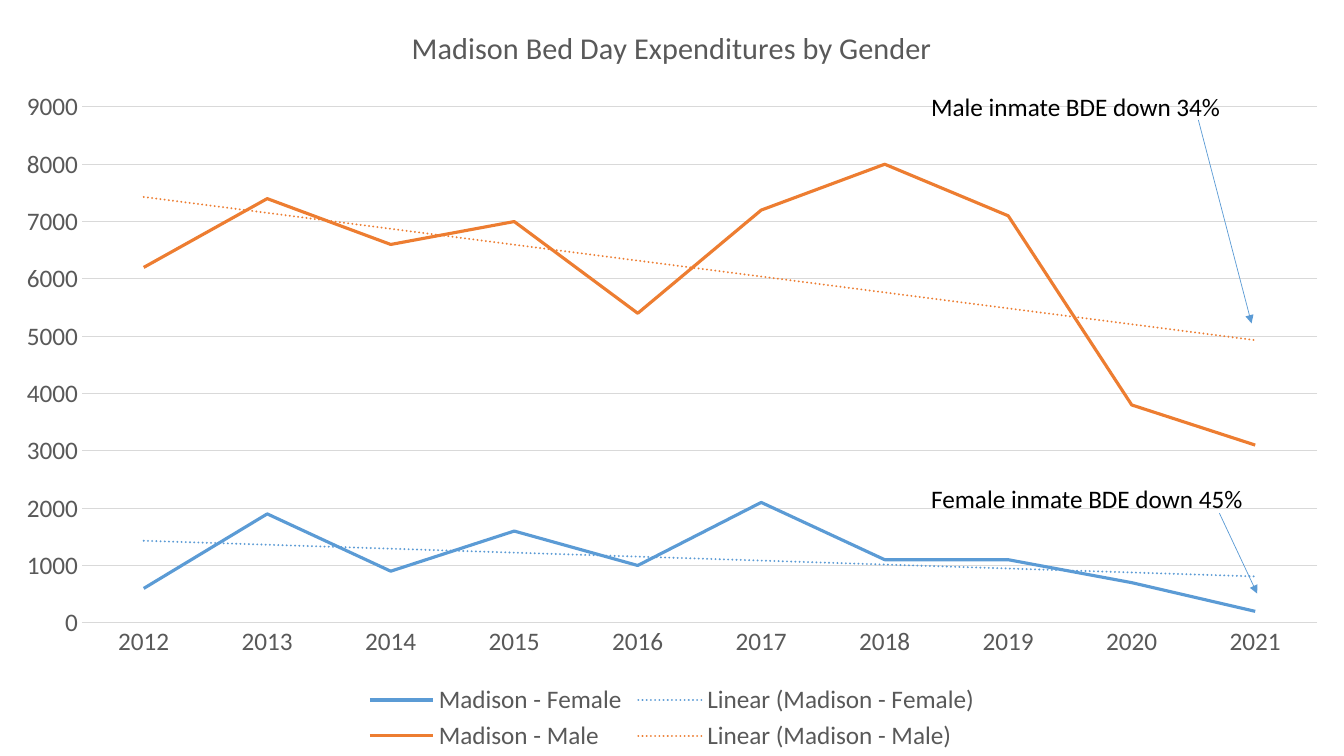
from dataclasses import dataclass

from lxml import etree
from pptx import Presentation
from pptx.chart.data import CategoryChartData
from pptx.dml.color import RGBColor
from pptx.enum.chart import XL_CHART_TYPE, XL_LEGEND_POSITION, XL_MARKER_STYLE, XL_TICK_MARK
from pptx.enum.shapes import MSO_CONNECTOR
from pptx.enum.text import MSO_AUTO_SIZE
from pptx.oxml import parse_xml
from pptx.oxml.ns import nsdecls, qn
from pptx.util import Pt

LINE_CHART = XL_CHART_TYPE.LINE
LEGEND_BOTTOM = XL_LEGEND_POSITION.BOTTOM
NO_MARKER = XL_MARKER_STYLE.NONE
NO_TICK = XL_TICK_MARK.NONE
STRAIGHT = MSO_CONNECTOR.STRAIGHT
FIT_SHAPE = MSO_AUTO_SIZE.SHAPE_TO_FIT_TEXT


@dataclass(frozen=True)
class Theme:
    font: str = "Calibri"
    black: str = "000000"
    gray: str = "595959"
    grid: str = "D9D9D9"
    blue: str = "5B9BD5"
    orange: str = "ED7D31"
    title_size: float = 21.6
    body_size: float = 18


THEME = Theme()
SLIDE_WIDTH, SLIDE_HEIGHT = 960, 540
CHART_TITLE = "Madison Bed Day Expenditures by Gender"
YEARS = [str(year) for year in range(2012, 2022)]
EXPENDITURES = [
    ("Madison - Female", THEME.blue,
     (600, 1900, 900, 1600, 1000, 2100, 1100, 1100, 700, 200)),
    ("Madison - Male", THEME.orange,
     (6200, 7400, 6600, 7000, 5400, 7200, 8000, 7100, 3800, 3100)),
]
# Text, text box, arrow start and arrow end
CALLOUTS = [
    ("Male inmate BDE down 34%", (658, 62, 223, 29), (856, 85.7), (894, 231)),
    ("Female inmate BDE down 45%", (658, 341.5, 240, 29), (871, 366.5), (898, 424)),
]


def format_font(font, size=THEME.body_size, color=THEME.gray):
    font.name = THEME.font
    font.size = Pt(size)
    font.bold = False
    font.color.rgb = RGBColor.from_string(color)


def format_line(line, color, width):
    line.color.rgb = RGBColor.from_string(color)
    line.width = Pt(width)


def add_text(slide, text, box, **font_format):
    shape = slide.shapes.add_textbox(*map(Pt, box))
    frame = shape.text_frame
    frame.word_wrap = False
    frame.auto_size = FIT_SHAPE
    run = frame.paragraphs[0].add_run()
    run.text = text
    format_font(run.font, **font_format)


def add_arrow(slide, start, end, color=THEME.blue, width=0.5):
    arrow = slide.shapes.add_connector(STRAIGHT, *map(Pt, start + end))
    format_line(arrow.line, color, width)
    line = arrow.line._get_or_add_ln()
    etree.SubElement(line, qn("a:tailEnd"), type="triangle")
    etree.SubElement(arrow._element.spPr, qn("a:effectLst"))


def add_trend_line(series, color):
    """Add a dotted linear trend line, which the schema places before the categories."""
    trend_line = parse_xml(
        f'<c:trendline {nsdecls("c", "a")}><c:spPr>'
        f'<a:ln w="{Pt(1.5)}" cap="rnd"><a:solidFill><a:srgbClr val="{color}"/></a:solidFill>'
        '<a:prstDash val="sysDot"/></a:ln></c:spPr>'
        '<c:trendlineType val="linear"/><c:dispRSqr val="0"/><c:dispEq val="0"/>'
        '</c:trendline>')
    series._element.find(qn("c:cat")).addprevious(trend_line)


def set_plot_area(chart, **fractions):
    """Fix the inner plot area as fractions of the chart."""
    plot_area = chart._chartSpace.chart.plotArea
    for layout in plot_area.findall(qn("c:layout")):
        plot_area.remove(layout)
    modes = '<c:xMode val="edge"/><c:yMode val="edge"/>'
    values = "".join(f'<c:{name} val="{value}"/>' for name, value in fractions.items())
    plot_area.insert(0, parse_xml(
        f'<c:layout {nsdecls("c")}><c:manualLayout><c:layoutTarget val="inner"/>'
        f'{modes}{values}</c:manualLayout></c:layout>'))


def format_axes(chart):
    for axis in (chart.category_axis, chart.value_axis):
        axis.major_tick_mark = axis.minor_tick_mark = NO_TICK
        format_font(axis.tick_labels.font)
    format_line(chart.category_axis.format.line, THEME.grid, 0.75)
    value_axis = chart.value_axis
    value_axis.minimum_scale, value_axis.maximum_scale = 0, 9000
    value_axis.major_unit = 1000
    value_axis.format.line.fill.background()
    format_line(value_axis.major_gridlines.format.line, THEME.grid, 0.75)


def add_expenditure_chart(slide, box):
    data = CategoryChartData(number_format="General")
    data.categories = YEARS
    for name, _, values in EXPENDITURES:
        data.add_series(name, values)
    chart = slide.shapes.add_chart(LINE_CHART, *map(Pt, box), data).chart
    format_font(chart.font)

    chart.has_title = True
    title = chart.chart_title
    title.include_in_layout = False
    run = title.text_frame.paragraphs[0].add_run()
    run.text = CHART_TITLE
    format_font(run.font, size=THEME.title_size)

    chart.has_legend = True
    chart.legend.position = LEGEND_BOTTOM
    chart.legend.include_in_layout = False
    format_font(chart.legend.font)

    format_axes(chart)
    chart.plots[0].vary_by_categories = False
    for series, (_, color, _) in zip(chart.plots[0].series, EXPENDITURES):
        series.smooth = False
        series.marker.style = NO_MARKER
        format_line(series.format.line, color, 2.25)
        add_trend_line(series, color)
    set_plot_area(chart, x=0.061, y=0.1415, w=0.919, h=0.6825)


def add_callouts(slide, box):
    left, top, _, _ = box
    for text, (x, y, width, height), start, end in CALLOUTS:
        add_text(slide, text, (left + x, top + y, width, height), color=THEME.black)
        add_arrow(slide, (left + start[0], top + start[1]), (left + end[0], top + end[1]))


def main():
    presentation = Presentation()
    presentation.slide_width = Pt(SLIDE_WIDTH)
    presentation.slide_height = Pt(SLIDE_HEIGHT)
    blank_layout = presentation.slide_layouts[6]
    slide = presentation.slides.add_slide(blank_layout)
    slide_box = (0, 0, SLIDE_WIDTH, SLIDE_HEIGHT)
    add_expenditure_chart(slide, slide_box)
    add_callouts(slide, slide_box)
    presentation.save("out.pptx")


if __name__ == "__main__":
    main()
